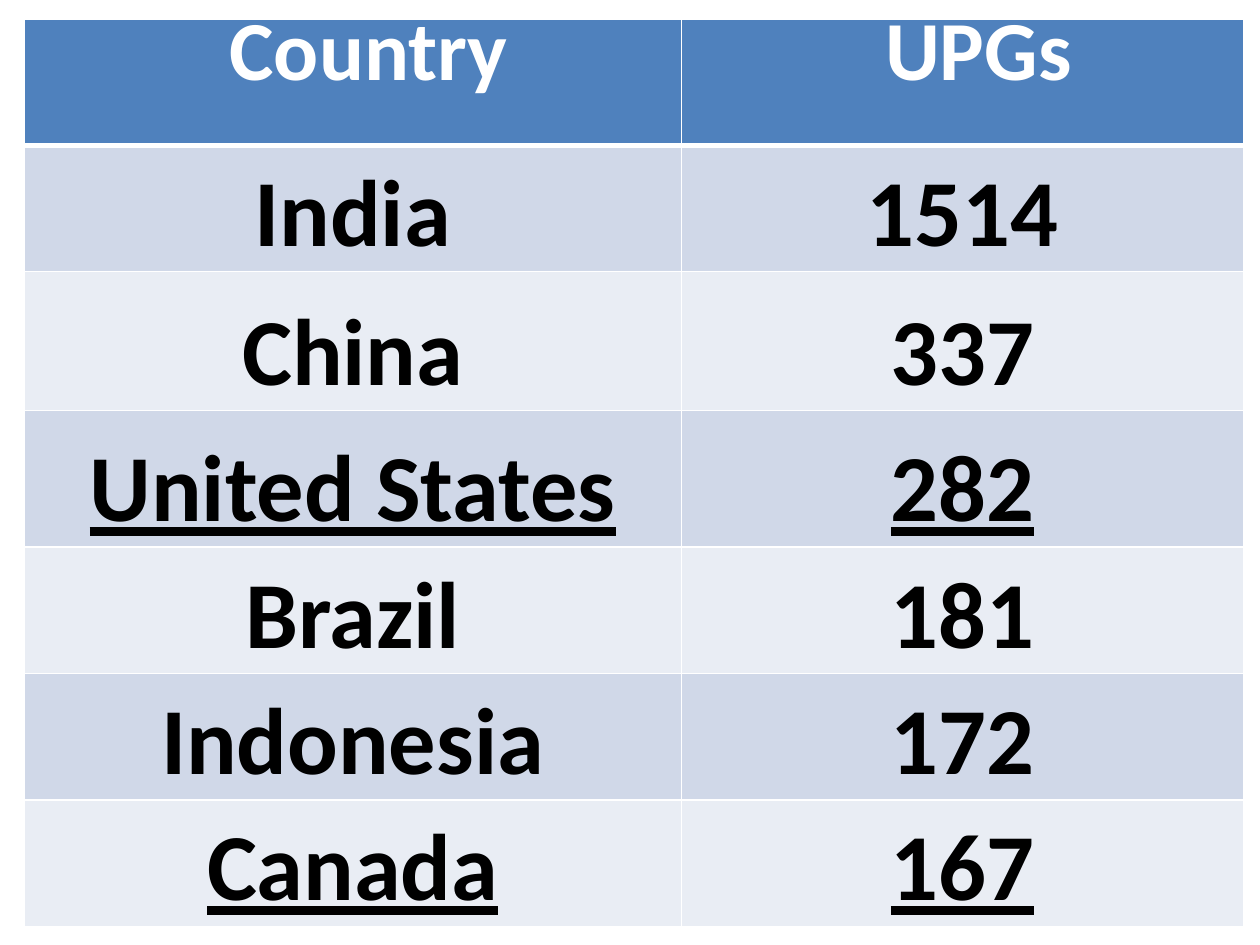
from lxml import etree
from pptx import Presentation
from pptx.dml.color import RGBColor
from pptx.enum.text import MSO_ANCHOR, PP_ALIGN
from pptx.oxml.ns import qn
from pptx.util import Cm, Pt

CENTER = PP_ALIGN.CENTER
TOP, BOTTOM = MSO_ANCHOR.TOP, MSO_ANCHOR.BOTTOM

HEADER = ("Country", "UPGs")
COUNTRIES = [
    ("India", "1514"),
    ("China", "337"),
    ("United States", "282"),
    ("Brazil", "181"),
    ("Indonesia", "172"),
    ("Canada", "167"),
]
UNDERLINED = {"United States", "Canada"}

THEME = {
    "font": "Calibri",
    "header_size": Pt(48),
    "body_size": Pt(54),
    "line_spacing": Pt(24),
    "header_fill": "4F81BD",
    "header_text": "FFFFFF",
    "body_text": "000000",
    "bands": ("D0D8E8", "E9EDF4"),
    "border": "FFFFFF",
    "thin": Pt(1),
    "thick": Pt(3),
}

LEFT, TABLE_TOP = Cm(0.48), Cm(0.38)
COL_WIDTHS = [Cm(13.26), Cm(11.33)]
ROW_HEIGHTS = [Cm(h) for h in (2.55, 2.55, 2.8, 2.75, 2.55, 2.55, 2.55)]
SIDE_MARGIN = Cm(0.05)
FIRST_LINE_INDENT = Cm(0.64)


def set_borders(cell, top, bottom):
    tc_pr = cell._tc.get_or_add_tcPr()
    sides = {"L": THEME["thin"], "R": THEME["thin"], "T": top, "B": bottom}
    for side, width in sides.items():
        ln = etree.SubElement(tc_pr, qn(f"a:ln{side}"), w=str(int(width)))
        fill = etree.SubElement(ln, qn("a:solidFill"))
        etree.SubElement(fill, qn("a:srgbClr"), val=THEME["border"])


def fill_cell(cell, text, fill, color, size, underline=False):
    cell.margin_left = cell.margin_right = SIDE_MARGIN
    cell.margin_top = cell.margin_bottom = 0
    cell.fill.solid()
    cell.fill.fore_color.rgb = RGBColor.from_string(fill)
    p = cell.text_frame.paragraphs[0]
    p.alignment = CENTER
    p.line_spacing = THEME["line_spacing"]
    r = p.add_run()
    r.text = text
    r.font.name = THEME["font"]
    r.font.size = size
    r.font.bold = True
    r.font.underline = underline
    r.font.color.rgb = RGBColor.from_string(color)


def add_header(table):
    for cell, text in zip(table.rows[0].cells, HEADER):
        set_borders(cell, THEME["thin"], THEME["thick"])
        fill_cell(cell, text, THEME["header_fill"], THEME["header_text"],
                  THEME["header_size"])
        cell.vertical_anchor = TOP
        cell.margin_top = THEME["line_spacing"]
        p_pr = cell.text_frame.paragraphs[0]._p.get_or_add_pPr()
        p_pr.set("marL", "0")
        p_pr.set("indent", str(int(FIRST_LINE_INDENT)))


def add_countries(table):
    for i, record in enumerate(COUNTRIES):
        top = THEME["thin"] if i else THEME["thick"]
        for cell, text in zip(table.rows[i + 1].cells, record):
            set_borders(cell, top, THEME["thin"])
            fill_cell(cell, text, THEME["bands"][i % 2], THEME["body_text"],
                      THEME["body_size"], record[0] in UNDERLINED)
            cell.vertical_anchor = BOTTOM


def main():
    prs = Presentation()
    prs.slide_width, prs.slide_height = Cm(25.4), Cm(19.05)
    s = prs.slides.add_slide(prs.slide_layouts[6])
    table = s.shapes.add_table(
        len(ROW_HEIGHTS), len(COL_WIDTHS), LEFT, TABLE_TOP,
        sum(COL_WIDTHS), sum(ROW_HEIGHTS)).table
    for column, width in zip(table.columns, COL_WIDTHS):
        column.width = width
    for row, height in zip(table.rows, ROW_HEIGHTS):
        row.height = height
    add_header(table)
    add_countries(table)
    prs.save("out.pptx")


if __name__ == "__main__":
    main()
